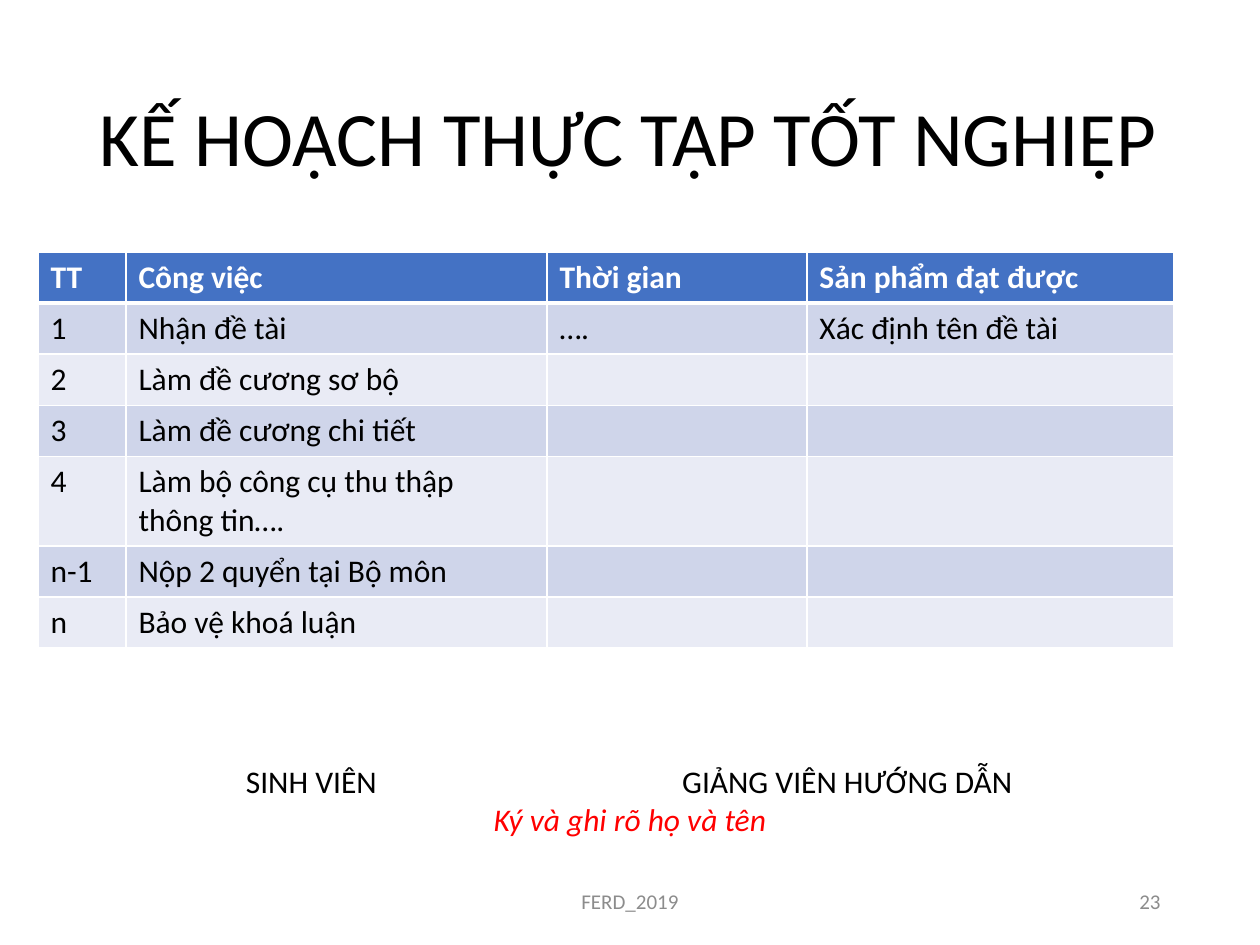
from dataclasses import dataclass

from lxml import etree
from pptx import Presentation
from pptx import util as u
from pptx.dml.color import RGBColor
from pptx.enum import text
from pptx.oxml.ns import qn

PX = 914400 / 126  # EMU in one px


@dataclass(frozen=True)
class Theme:
    font: str = "Calibri"
    ink: str = "000000"
    white: str = "FFFFFF"
    header: str = "4472C4"
    bands: tuple = ("CFD5EA", "E9EBF5")
    accent: str = "FF0000"
    muted: str = "8C8C8C"
    title_size: int = 44
    body_size: int = 18
    footer_size: int = 12


THEME = Theme()
ALIGN = text.PP_ALIGN
TITLE = "KẾ HOẠCH THỰC TẬP TỐT NGHIỆP"
COLUMNS = (88, 421, 260, 367)
ROW_HEIGHT = 51
PLAN = (
    ("TT", "Công việc", "Thời gian", "Sản phẩm đạt được"),
    ("1", "Nhận đề tài", "….", "Xác định tên đề tài"),
    ("2", "Làm đề cương sơ bộ", "", ""),
    ("3", "Làm đề cương chi tiết", "", ""),
    ("4", "Làm bộ công cụ thu thập thông tin….", "", ""),
    ("n-1", "Nộp 2 quyển tại Bộ môn", "", ""),
    ("n", "Bảo vệ khoá luận", "", ""),
)
# Signers and the centre of each, measured from the text edge of the box
SIGNERS = (("SINH VIÊN", 143), ("GIẢNG VIÊN HƯỚNG DẪN", 679))


def px(length):
    return u.Emu(round(length * PX))


def add_span(para, words, size, color=THEME.ink, bold=False, italic=False):
    span = para.add_run()
    span.text = words
    font = span.font
    font.name, font.size = THEME.font, u.Pt(size)
    font.bold, font.italic = bold, italic
    font.color.rgb = RGBColor.from_string(color)


def add_box(page, box, anchor=text.MSO_ANCHOR.TOP):
    frame = page.shapes.add_textbox(*map(px, box)).text_frame
    frame.word_wrap = True
    frame.vertical_anchor = anchor
    return frame


def add_title(page, box):
    title = page.shapes.title
    title.left, title.top, title.width, title.height = map(px, box)
    frame = title.text_frame
    frame.auto_size = text.MSO_AUTO_SIZE.NONE
    frame.vertical_anchor = text.MSO_ANCHOR.MIDDLE
    para = frame.paragraphs[0]
    para.alignment, para.line_spacing = ALIGN.LEFT, 0.9
    add_span(para, TITLE, THEME.title_size)


def set_borders(cell, bottom, top):
    props = cell._tc.get_or_add_tcPr()
    for side, points in (("L", 1), ("R", 1), ("T", top), ("B", bottom)):
        line = etree.SubElement(props, qn(f"a:ln{side}"), w=str(u.Pt(points)))
        fill = etree.SubElement(line, qn("a:solidFill"))
        etree.SubElement(fill, qn("a:srgbClr"), val=THEME.white)


def add_plan(page, box):
    table = page.shapes.add_table(len(PLAN), len(COLUMNS), *map(px, box)).table
    for column, width in zip(table.columns, COLUMNS):
        column.width = px(width)
    for r, values in enumerate(PLAN):
        table.rows[r].height = px(ROW_HEIGHT)
        is_header = r == 0
        fill = THEME.header if is_header else THEME.bands[(r - 1) % 2]
        color = THEME.white if is_header else THEME.ink
        for c, words in enumerate(values):
            cell = table.cell(r, c)
            # A thick rule parts the header from the first row
            set_borders(cell, bottom=3 if is_header else 1, top=3 if r == 1 else 1)
            cell.fill.solid()
            cell.fill.fore_color.rgb = RGBColor.from_string(fill)
            if words:
                add_span(cell.text_frame.paragraphs[0], words,
                         THEME.body_size, color, bold=is_header)


def add_signatures(page, box):
    frame = add_box(page, box)
    # Signer names, each centred on its own tab stop
    names = frame.paragraphs[0]
    names.alignment = ALIGN.LEFT
    stops = etree.SubElement(names._p.get_or_add_pPr(), qn("a:tabLst"))
    for name, centre in SIGNERS:
        etree.SubElement(stops, qn("a:tab"), pos=str(px(centre)), algn="ctr")
        add_span(names, "\t" + name, THEME.body_size)
    # Signing instruction
    hint = frame.add_paragraph()
    hint.alignment = ALIGN.CENTER
    add_span(hint, "Ký và ghi rõ họ và tên", THEME.body_size, THEME.accent, italic=True)


def add_footer(page, box, words, alignment):
    para = add_box(page, box, text.MSO_ANCHOR.MIDDLE).paragraphs[0]
    para.alignment = alignment
    add_span(para, words, THEME.footer_size, THEME.muted)


def main():
    deck = Presentation()
    deck.slide_width, deck.slide_height = px(1260), px(945)
    page = deck.slides.add_slide(deck.slide_layouts[5])
    add_title(page, (87, 50, 1086, 183))
    add_plan(page, (38, 252, sum(COLUMNS), ROW_HEIGHT * len(PLAN)))
    add_signatures(page, (156, 756, 948, 89))
    add_footer(page, (417, 876, 426, 50), "FERD_2019", ALIGN.CENTER)
    add_footer(page, (890, 876, 283, 50), "23", ALIGN.RIGHT)
    deck.save("out.pptx")


if __name__ == "__main__":
    main()
